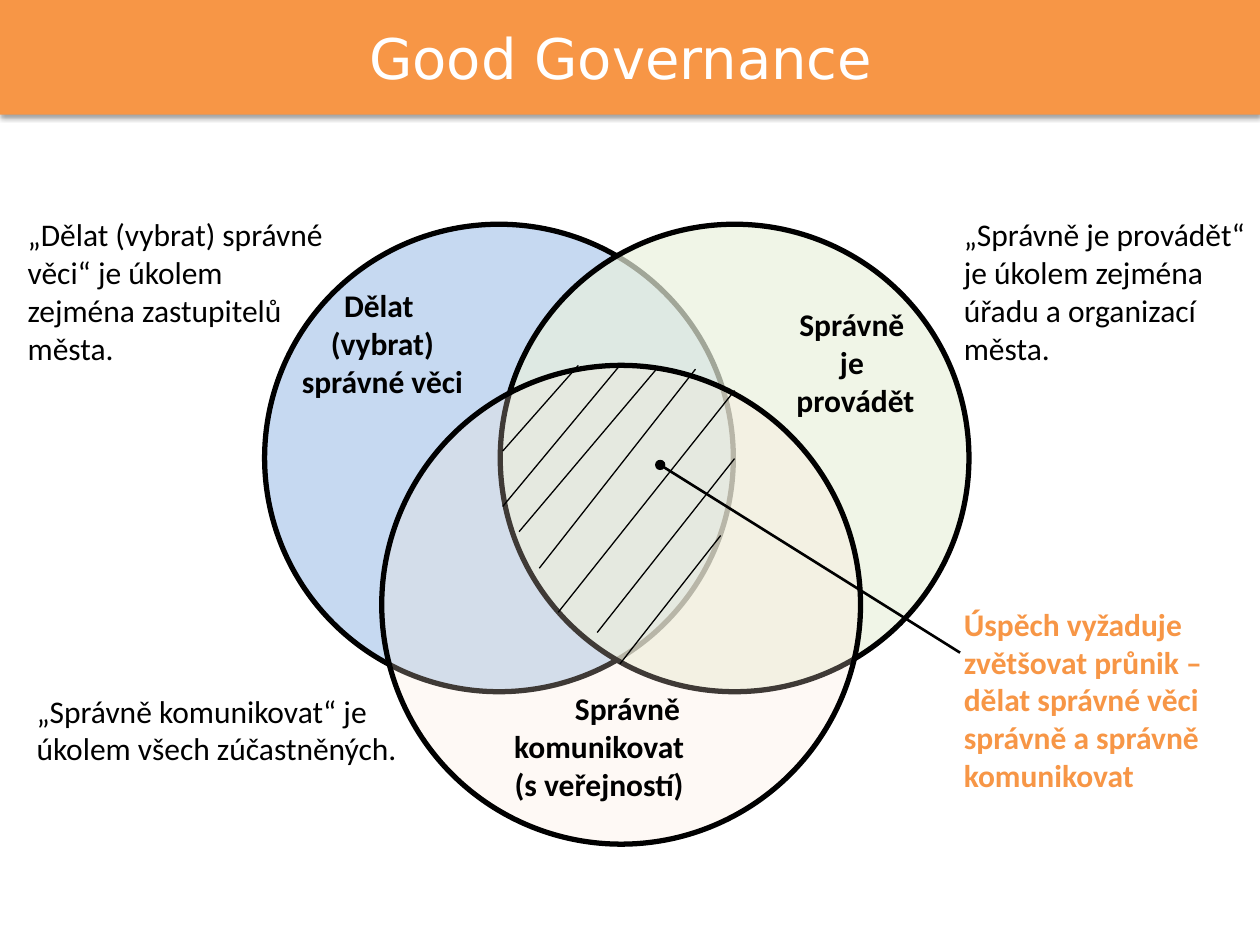
from lxml import etree
from pptx import Presentation
from pptx.dml.color import RGBColor
from pptx.enum import shapes, text
from pptx.oxml import ns
from pptx.util import Inches, Pt

BLACK = RGBColor(0x00, 0x00, 0x00)
WHITE = RGBColor(0xFF, 0xFF, 0xFF)
ORANGE = RGBColor(0xF7, 0x96, 0x46)
BLUE = RGBColor(0xC6, 0xD9, 0xF1)
GREEN = RGBColor(0xEA, 0xF1, 0xDD)
PEACH = RGBColor(0xFD, 0xE9, 0xD9)

NOTE_INSETS = (0.02, 0.01, 0.02, 0.01)

# left, top, width, height, fill, opacity in percent
CIRCLES = [
    (2.1, 1.78, 3.72, 3.71, BLUE, 100),
    (3.97, 1.78, 3.72, 3.71, GREEN, 69),
    (3.03, 2.9, 3.8, 3.8, PEACH, 25),
]

# start x, start y, end x, end y
HATCHING = [
    (3.99, 3.58, 4.59, 2.9),
    (3.99, 4.02, 4.92, 2.9),
    (4.12, 4.22, 5.21, 2.93),
    (4.28, 4.51, 5.52, 2.93),
    (4.43, 4.86, 5.83, 3.1),
    (4.74, 5.02, 5.83, 3.64),
    (4.92, 5.27, 5.72, 4.25),
]

# left, top, width, height, wording
NOTES = [
    (0.2, 1.7, 2.4, 1.48,
     "„Dělat (vybrat) správné věci“ je úkolem zejména zastupitelů města."),
    (7.63, 1.7, 2.37, 1.26,
     "„Správně je provádět“ je úkolem zejména úřadu a organizací města."),
    (0.27, 5.48, 3.03, 1.04,
     "„Správně komunikovat“ je úkolem všech zúčastněných."),
]


def add_child(parent, tag, **attributes):
    return etree.SubElement(parent, ns.qn(tag), attributes)


def set_title(slide, wording):
    """Turn the title placeholder into a shadowed band across the top."""
    title = slide.shapes.title
    title.left, title.top = Inches(0), Inches(0)
    title.width, title.height = Inches(10), Inches(0.91)
    title.fill.solid()
    title.fill.fore_color.rgb = ORANGE
    effects = add_child(title._element.spPr, "a:effectLst")
    shadow = add_child(effects, "a:outerShdw", blurRad=str(Pt(3.1)),
                       dist=str(Pt(1.6)), dir="5400000", rotWithShape="0")
    colour = add_child(shadow, "a:srgbClr", val=str(BLACK))
    add_child(colour, "a:alpha", val="38000")

    frame = title.text_frame
    frame.text = wording
    frame.auto_size = text.MSO_AUTO_SIZE.NONE
    frame.vertical_anchor = text.MSO_ANCHOR.MIDDLE
    paragraph = frame.paragraphs[0]
    paragraph.alignment = text.PP_ALIGN.CENTER
    paragraph.font.name = "DejaVu Sans"
    paragraph.font.size = Pt(32)
    paragraph.font.color.rgb = WHITE


def add_circle(slide, left, top, width, height, fill, opacity):
    circle = slide.shapes.add_shape(
        shapes.MSO_SHAPE.OVAL,
        Inches(left), Inches(top), Inches(width), Inches(height))
    circle.shadow.inherit = False
    circle.fill.solid()
    circle.fill.fore_color.rgb = fill
    if opacity < 100:
        colour = circle._element.spPr.find(".//" + ns.qn("a:srgbClr"))
        add_child(colour, "a:alpha", val=str(opacity * 1000))
    circle.line.color.rgb = BLACK
    circle.line.width = Pt(3)


def add_text(slide, left, top, width, height, lines, insets=NOTE_INSETS,
             color=BLACK, bold=False, align=text.PP_ALIGN.LEFT):
    """Add a wrapped text box with one paragraph per line; return its frame."""
    box = slide.shapes.add_textbox(
        Inches(left), Inches(top), Inches(width), Inches(height))
    frame = box.text_frame
    frame.word_wrap = True
    (frame.margin_left, frame.margin_top,
     frame.margin_right, frame.margin_bottom) = map(Inches, insets)
    frame.text = "\n".join(lines)
    for paragraph in frame.paragraphs:
        paragraph.alignment = align
        paragraph.font.name = "Calibri"
        paragraph.font.size = Pt(18)
        paragraph.font.bold = bold
        paragraph.font.color.rgb = color
    return frame


def add_label(slide, left, top, width, height, lines, insets):
    return add_text(slide, left, top, width, height, lines, insets,
                    bold=True, align=text.PP_ALIGN.CENTER)


def add_line(slide, start_x, start_y, end_x, end_y, weight=0.75, dot=False):
    """Add a black line, with a round dot at its start if asked."""
    line = slide.shapes.add_connector(
        shapes.MSO_CONNECTOR.STRAIGHT,
        Inches(start_x), Inches(start_y), Inches(end_x), Inches(end_y))
    line.line.color.rgb = BLACK
    line.line.width = Pt(weight)
    if dot:
        add_child(line.line._get_or_add_ln(), "a:headEnd", type="oval")
    add_child(line._element.spPr, "a:effectLst")


def main():
    deck = Presentation()
    deck.slide_width, deck.slide_height = Inches(10), Inches(7.5)
    slide = deck.slides.add_slide(deck.slide_layouts[5])
    set_title(slide, "Good Governance ")

    for circle in CIRCLES:
        add_circle(slide, *circle)

    add_label(slide, 2.26, 2.26, 1.55, 1.32,
              ["Dělat ", "(vybrat) správné věci"], NOTE_INSETS)
    add_label(slide, 5.86, 2.42, 1.86, 1.22,
              ["Správně ", "je ", "provádět"], (0, 0, 0, 0))
    communicate = add_label(slide, 3.97, 5.47, 2.02, 1.09,
                            ["Správně", "komunikovat", "(s veřejností)"],
                            (0, 0, 0, 0.04))
    # A right indent moves the middle line left of centre.
    indented = communicate.paragraphs[1]._p.get_or_add_pPr()
    indented.set("marR", str(Inches(0.45)))

    for stroke in HATCHING:
        add_line(slide, *stroke)
    add_line(slide, 5.24, 3.69, 7.62, 5.18, weight=1.5, dot=True)

    for *place, wording in NOTES:
        add_text(slide, *place, [wording])
    add_text(slide, 7.63, 4.79, 2.26, 1.54,
             ["Úspěch vyžaduje zvětšovat průnik – dělat správné věci "
              "správně a správně komunikovat"], color=ORANGE, bold=True)

    deck.save("out.pptx")


if __name__ == "__main__":
    main()
